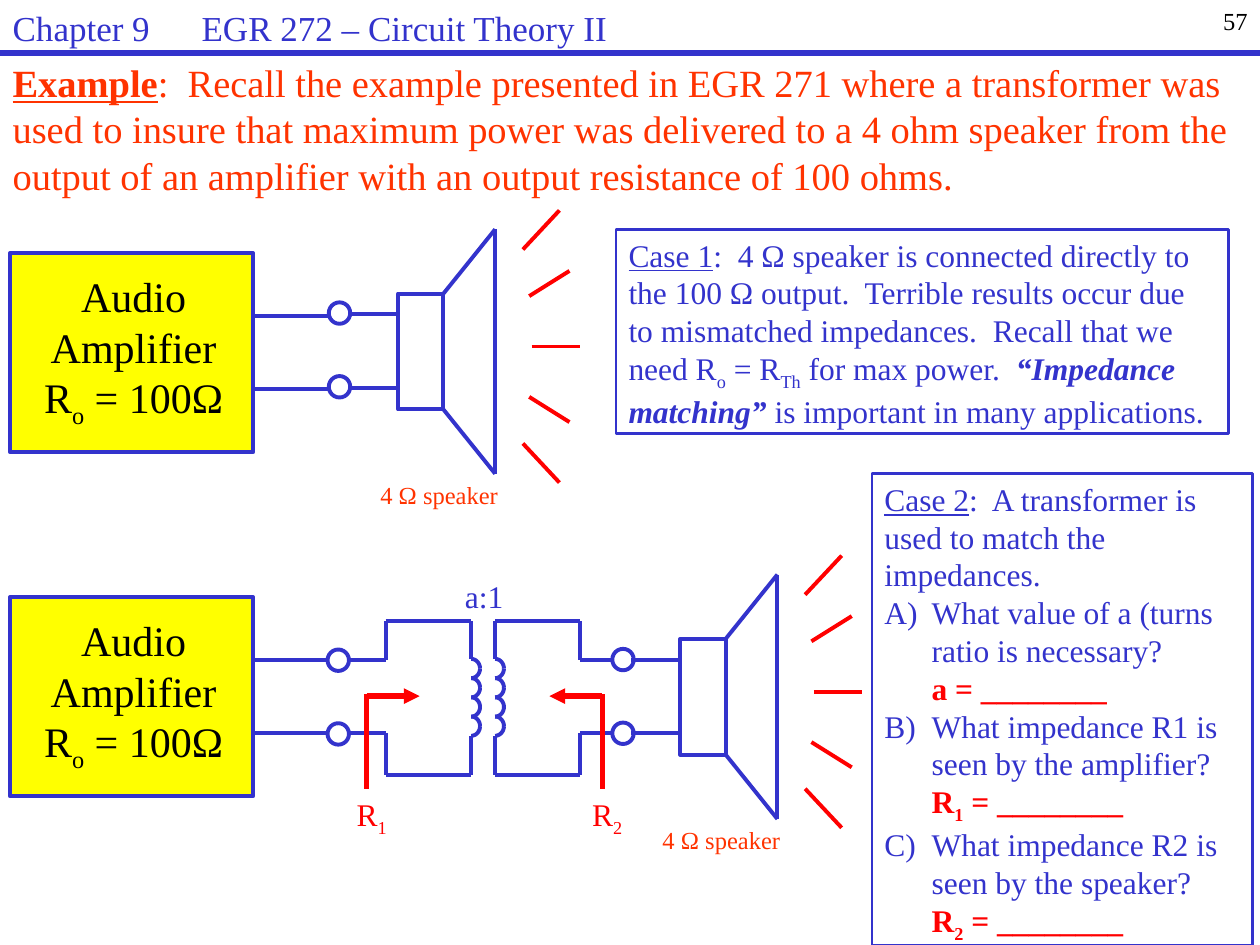
import math

from lxml import etree
from pptx import Presentation
from pptx import util as u
from pptx.dml.color import RGBColor
from pptx.enum import shapes as kinds, text as t
from pptx.oxml.ns import qn

WIDTH, HEIGHT = u.Inches(10), u.Inches(7.5)
COLUMNS, ROWS = 100, 75
BLUE, RED, ORANGE, YELLOW, BLACK = "3333CC", "FF0000", "FF3300", "FFFF00", "000000"
SUB = {"baseline": -25000}
TIGHT = {f"margin_{side}": 0 for side in ("left", "top", "right", "bottom")}
GROW = {"auto_size": t.MSO_AUTO_SIZE.SHAPE_TO_FIT_TEXT, "word_wrap": True}
LABEL = {**GROW, "word_wrap": False}
BANNER = {"word_wrap": True, "auto_size": t.MSO_AUTO_SIZE.NONE,
          "vertical_anchor": t.MSO_ANCHOR.TOP}
HANGING = {"marL": 3.75, "indent": -3.75}
ANSWER = {"marL": 3.75, "indent": 0}


def colour(value):
    return RGBColor.from_string(value)


def x(columns):
    return round(WIDTH * columns / COLUMNS)


def y(rows):
    return round(HEIGHT * rows / ROWS)


def box(left, top, width, height):
    return x(left), y(top), x(width), y(height)


def apply(target, values):
    for name, value in values.items():
        setattr(target, name, value)


def write(frame, paragraphs, size, tint, form, align=t.PP_ALIGN.LEFT):
    apply(frame, form)
    for number, runs in enumerate(paragraphs):
        paragraph = frame.add_paragraph() if number else frame.paragraphs[0]
        paragraph.alignment = align
        for words, style in runs:
            style = dict(style)
            run = paragraph.add_run()
            run.text = words
            baseline = style.pop("baseline", None)
            run.font.color.rgb = colour(style.pop("tint", tint))
            apply(run.font, {"name": "Times New Roman", "size": u.Pt(size), **style})
            if baseline:
                run._r.get_or_add_rPr().set("baseline", str(baseline))


def indent(paragraph, lengths, bullet="buNone", **attributes):
    properties = paragraph._p.get_or_add_pPr()
    for name, columns in lengths.items():
        properties.set(name, str(x(columns)))
    etree.SubElement(properties, qn(f"a:{bullet}"), attributes)
    return properties


def label(parts, place, paragraphs, size, tint, form, align=t.PP_ALIGN.LEFT):
    frame = parts.add_textbox(*box(*place)).text_frame
    write(frame, paragraphs, size, tint, form, align)


def outline(shape, weight=2.25, fill=None):
    shape.shadow.inherit = False
    shape.line.color.rgb = colour(BLUE)
    shape.line.width = u.Pt(weight)
    if fill:
        shape.fill.solid()
        shape.fill.fore_color.rgb = colour(fill)
    else:
        shape.fill.background()
    return shape


def preset(parts, kind, place, **style):
    return outline(parts.add_shape(kind, *box(*place)), **style)


def stroke(parts, origin, start, end, tint=BLUE, weight=2.25, arrow=False):
    left, top = origin
    line = parts.add_connector(kinds.MSO_CONNECTOR.STRAIGHT,
                               x(left + start[0]), y(top + start[1]),
                               x(left + end[0]), y(top + end[1]))
    line.line.color.rgb = colour(tint)
    line.line.width = u.Pt(weight)
    if arrow:
        etree.SubElement(line.line._get_or_add_ln(), qn("a:tailEnd"), type="triangle")
    etree.SubElement(line._element.spPr, qn("a:effectLst"))


def heading(slide):
    title, body = slide.placeholders
    for holder, place, size, tint, runs in (
        (title, (0, 0, 73.3, 3.3), 20, BLUE,
         [("Chapter 9\tEGR 272 – Circuit Theory II", {})]),
        (body, (0, 4.2, 100, 13.3), 22, ORANGE,
         [("Example", {"bold": True, "underline": True}),
          (":  Recall the example presented in EGR 271 where a transformer was used to "
           "insure that maximum power was delivered to a 4 ohm speaker from the output "
           "of an amplifier with an output resistance of 100 ohms.", {})]),
    ):
        apply(holder, dict(zip(("left", "top", "width", "height"), box(*place))))
        write(holder.text_frame, [runs], size, tint, BANNER)
        paragraph = holder.text_frame.paragraphs[0]
        paragraph.space_before = u.Pt(2.5)
        properties = indent(paragraph, {"marL": 0, "indent": 0})
        if holder is title:
            tabs = etree.SubElement(properties, qn("a:tabLst"))
            etree.SubElement(tabs, qn("a:tab"), pos=str(x(15)), algn="l")
    label(slide.shapes, (79.2, 0, 20.8, 4.2), [[("57", {})]], 14, BLACK,
          {"word_wrap": True}, t.PP_ALIGN.RIGHT)
    stroke(slide.shapes, (0, 4.2), (0, 0), (100, 0), weight=3)


def amplifier(parts, left, top):
    preset(parts, kinds.MSO_SHAPE.RECTANGLE, (left, top, 19.3, 15.8), fill=YELLOW)
    label(parts, (left + 1.2, top + 0.9, 17.2, 13.1),
          [[("Audio", {})], [("Amplifier", {})], [("R", {}), ("o", SUB), (" = 100Ω", {})]],
          24, BLACK, LABEL, t.PP_ALIGN.CENTER)
    for row in (4.95, 10.8):
        stroke(parts, (left, top), (19.4, row), (25.2, row))


def terminals(parts, left, top):
    for row in (0, 5.85):
        preset(parts, kinds.MSO_SHAPE.OVAL, (left, top + row, 1.7, 1.7))


def speaker(parts, left, top):
    origin = left, top
    preset(parts, kinds.MSO_SHAPE.RECTANGLE, (left, top + 5.1, 3.6, 9.2))
    for start, end in (((3.6, 5.1), (7.7, 0)), ((3.6, 14.3), (7.7, 19.4)),
                       ((7.7, 0), (7.7, 19.4)),
                       ((-3.9, 6.75), (0, 6.75)), ((-3.9, 12.6), (0, 12.6))):
        stroke(parts, origin, start, end)
    middle = 9.3
    for near, far, inner, outer in ((9.9, 12.8, 7.7, 10.8), (10.4, 13.6, 4, 6)):
        for side in (-1, 1):
            stroke(parts, origin, (near, middle + side * inner),
                   (far, middle + side * outer), RED)
    stroke(parts, origin, (10.6, middle), (14.4, middle), RED)
    label(parts, (left - 2.4, top + 19.4, 12, 3.4), [[("4 Ω speaker", {})]],
          14, ORANGE, LABEL)


def coil(parts, left, top, height, turns=4):
    radius = height / turns / 2
    for quarter in range(2 * turns):
        center = top + radius * (2 * (quarter // 2) + 1)
        first = -90 + 90 * (quarter % 2)
        angles = [math.radians(first + step) for step in range(0, 91, 10)]
        points = [(x(left + 0.7 * math.cos(a)), y(center + radius * math.sin(a)))
                  for a in angles]
        builder = parts.build_freeform(*points[0], scale=1.0)
        builder.add_line_segments(points[1:], close=False)
        outline(builder.convert_to_shape())


def transformer(parts, left, top):
    for core, edge, terminal in ((6.8, 0, -2.9), (8.7, 15.4, 17.9)):
        for start, end in (((edge, 0), (core, 0)), ((edge, 12.2), (core, 12.2)),
                           ((core, 0), (core, 3)), ((core, 9.1), (core, 12.2)),
                           ((edge, 0), (edge, 3.1)), ((edge, 8.9), (edge, 12.2)),
                           ((terminal, 3.1), (edge, 3.1)),
                           ((terminal, 8.9), (edge, 8.9))):
            stroke(parts, (left, top), start, end)
        coil(parts, left + core, top + 3, 6.1)
    label(parts, (left + 6.3, top - 3.5, 4.6, 3.1), [[("a:1", {})]], 18, BLUE,
          {**GROW, **TIGHT})


def impedance(parts, left, top, subscript, direction):
    origin = left, top
    stroke(parts, origin, (0, 0.15), (4.2 * direction, 0.15), RED, 3, arrow=True)
    stroke(parts, origin, (0, 0), (0, 7.5), RED, 3)
    label(parts, (left - 0.8, top + 8, 4.6, 3), [[("R", {}), (subscript, SUB)]],
          18, RED, {**GROW, **TIGHT})


def case(slide, place, paragraphs):
    panel = preset(slide.shapes, kinds.MSO_SHAPE.RECTANGLE, place, weight=1.5)
    write(panel.text_frame, paragraphs, 18, BLUE,
          {**GROW, "vertical_anchor": t.MSO_ANCHOR.TOP})
    return panel.text_frame.paragraphs


def direct_case(slide):
    parts = slide.shapes.add_group_shape().shapes
    amplifier(parts, 0.8, 20.1)
    speaker(parts, 31.6, 18.2)
    terminals(parts, 26.1, 24)
    case(slide, (48.9, 18.2, 48.6, 16.2), [[
        ("Case 1", {"underline": True}),
        (":  4 Ω speaker is connected directly to the 100 Ω output.  Terrible results "
         "occur due to mismatched impedances.  Recall that we need R", {}),
        ("o", SUB), (" = R", {}), ("Th", SUB), (" for max power.  ", {}),
        ("“Impedance matching”", {"bold": True, "italic": True}),
        (" is important in many applications.", {})]])


def matched_case(slide):
    parts = slide.shapes.add_group_shape().shapes
    amplifier(parts, 0.8, 47.4)
    speaker(parts, 54, 45.6)
    terminals(parts, 26, 51.55)
    terminals(parts, 48.6, 51.5)
    transformer(parts, 30.6, 49.3)
    impedance(parts, 29.1, 55.1, "1", 1)
    impedance(parts, 47.8, 55.1, "2", -1)
    strong = {"bold": True, "tint": RED}
    paragraphs = [[("Case 2", {"underline": True}),
                   (":  A transformer is used to match the impedances.", {})]]
    for question, symbol, subscript in (
        ("What value of a (turns ratio is necessary?", "a", ""),
        ("What impedance R1 is seen by the amplifier?", "R", "1"),
        ("What impedance R2 is seen by the speaker?", "R", "2"),
    ):
        answer = [(symbol, strong), (subscript, {**strong, **SUB}), (" = ________", strong)]
        paragraphs += [[(question, {})], [part for part in answer if part[0]]]
    lines = case(slide, (69.2, 37.6, 30.2, 37.4), paragraphs)
    for number, (question, answer) in enumerate(zip(lines[1::2], lines[2::2]), 1):
        indent(question, HANGING, "buAutoNum", type="alphaUcParenR", startAt=str(number))
        indent(answer, ANSWER)


def main():
    deck = Presentation()
    apply(deck, {"slide_width": WIDTH, "slide_height": HEIGHT})
    slide = deck.slides.add_slide(deck.slide_layouts[1])
    heading(slide)
    direct_case(slide)
    matched_case(slide)
    deck.save("out.pptx")


if __name__ == "__main__":
    main()
